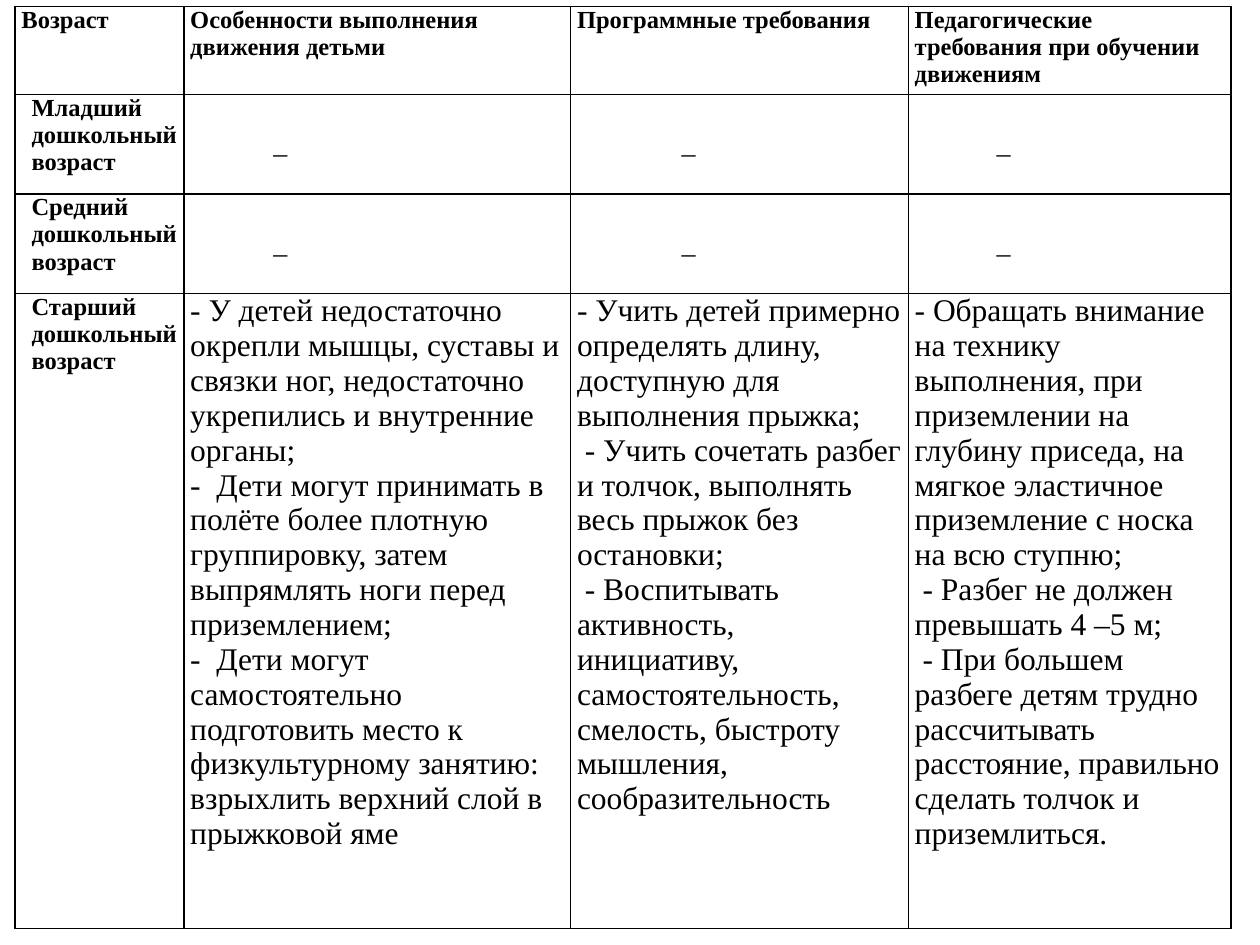
import pptx
import pptx.dml.color
import pptx.enum.text
import pptx.oxml
import pptx.oxml.ns
import pptx.util
from pptx.util import Inches

FONT = "Times New Roman"
BLACK = "000000"
WHITE = "FFFFFF"

COLUMN_WIDTHS = [1.34, 3.07, 2.68, 2.56]
ROW_HEIGHTS = [0.7, 0.79, 0.79, 5.04]
DASH_INDENTS = [0.66, 0.83, 0.65]

HEADINGS = [
    "Возраст",
    "Особенности выполнения движения детьми",
    "Программные требования",
    "Педагогические требования при обучении движениям",
]
AGES = [
    "Младший дошкольный возраст",
    "Средний дошкольный возраст",
    "Старший дошкольный возраст",
]
SENIOR_NOTES = [
    [
        "- У детей недостаточно окрепли мышцы, суставы и связки ног, "
        "недостаточно укрепились и внутренние органы;",
        "-  Дети могут принимать в полёте более плотную группировку, "
        "затем выпрямлять ноги перед приземлением;",
        "-  Дети могут самостоятельно подготовить место к физкультурному "
        "занятию: взрыхлить верхний слой в прыжковой яме",
    ],
    [
        "- Учить детей примерно определять длину, доступную для выполнения прыжка;",
        " - Учить сочетать разбег и толчок, выполнять весь прыжок без остановки;",
        " - Воспитывать активность, инициативу, самостоятельность, смелость, "
        "быстроту мышления, сообразительность",
    ],
    [
        "- Обращать внимание на технику выполнения, при приземлении на глубину "
        "приседа, на мягкое эластичное приземление с носка на всю ступню;",
        " - Разбег не должен превышать 4 –5 м;",
        " - При большем разбеге детям трудно рассчитывать расстояние, "
        "правильно сделать толчок и приземлиться.",
    ],
]


def color(value):
    return pptx.dml.color.RGBColor.from_string(value)


def write(cell, lines, size=14, bold=False, indent=0, middle=False):
    """Fill a cell with one paragraph per line."""
    if middle:
        cell.vertical_anchor = pptx.enum.text.MSO_ANCHOR.MIDDLE
    frame = cell.text_frame
    for index, line in enumerate(lines):
        para = frame.add_paragraph() if index else frame.paragraphs[0]
        if indent:
            para._p.get_or_add_pPr().set("marL", str(Inches(indent)))
        span = para.add_run()
        span.text = line
        span.font.name = FONT
        span.font.size = pptx.util.Pt(size)
        span.font.bold = bold
        span.font.color.rgb = color(BLACK)


def style_cell(cell):
    """Give a cell narrow margins, thin black borders and a white fill."""
    cell.margin_left = cell.margin_right = Inches(0.05)
    cell.margin_top = cell.margin_bottom = 0
    properties = cell._tc.get_or_add_tcPr()
    for side in ("lnL", "lnR", "lnT", "lnB"):
        properties.append(pptx.oxml.parse_xml(
            f'<a:{side} {pptx.oxml.ns.nsdecls("a")} w="{pptx.util.Pt(1)}">'
            f'<a:solidFill><a:srgbClr val="{BLACK}"/></a:solidFill></a:{side}>'
        ))
    cell.fill.solid()
    cell.fill.fore_color.rgb = color(WHITE)


def main():
    deck = pptx.Presentation()
    deck.slide_width, deck.slide_height = Inches(10), Inches(7.5)
    page = deck.slides.add_slide(deck.slide_layouts[6])

    table = page.shapes.add_table(
        len(ROW_HEIGHTS), len(COLUMN_WIDTHS), Inches(0.12), Inches(0.05),
        Inches(sum(COLUMN_WIDTHS)), Inches(sum(ROW_HEIGHTS)),
    ).table
    table.first_row = table.horz_banding = False
    for column, width in zip(table.columns, COLUMN_WIDTHS):
        column.width = Inches(width)
    for row, height in zip(table.rows, ROW_HEIGHTS):
        row.height = Inches(height)
    for cell in table.iter_cells():
        style_cell(cell)

    for column, heading in enumerate(HEADINGS):
        write(table.cell(0, column), [heading], bold=True)
    for row, age in enumerate(AGES, start=1):
        write(table.cell(row, 0), [age], bold=True, indent=0.08)
    for column, (indent, notes) in enumerate(zip(DASH_INDENTS, SENIOR_NOTES), start=1):
        for row in (1, 2):
            write(table.cell(row, column), ["_"], size=16, indent=indent, middle=True)
        write(table.cell(3, column), notes, size=18)

    deck.save("out.pptx")


if __name__ == "__main__":
    main()
